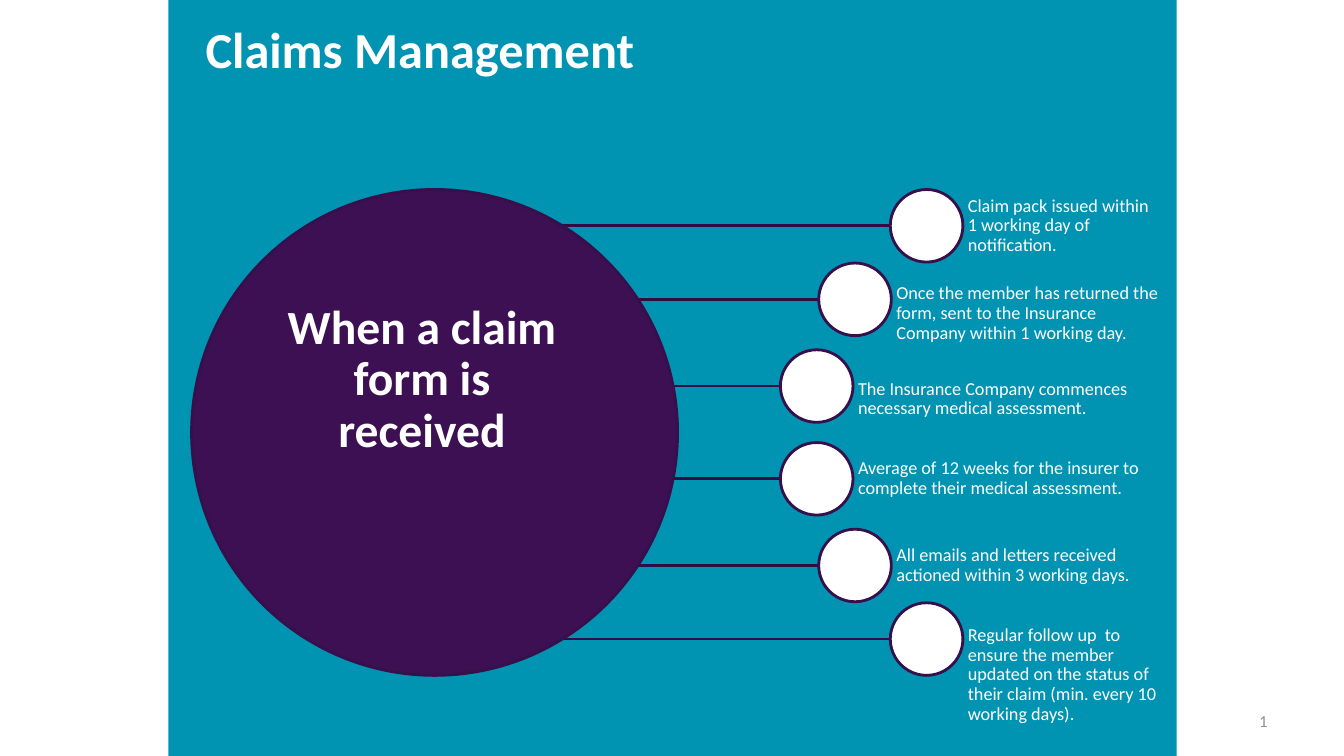
from lxml.etree import SubElement
from pptx import Presentation
from pptx.dml.color import RGBColor
from pptx.enum.shapes import MSO_CONNECTOR, MSO_SHAPE
from pptx.enum.text import MSO_ANCHOR, MSO_AUTO_SIZE, PP_ALIGN
from pptx.oxml.ns import qn
from pptx.util import Inches, Pt

TITLE = "Claims Management"
HUB = "When a claim form is received"
# step text, dot left, dot top, text drop below dot top, text height
STEPS = [
    ("Claim pack issued within 1 working day of notification.",
     8.83, 1.88, 0, 0.72),
    ("Once the member has returned the form, sent to the Insurance "
     "Company within 1 working day.", 8.12, 2.61, 0.14, 0.72),
    ("The Insurance Company commences necessary medical assessment.",
     7.74, 3.47, 0.13, 0.72),
    ("Average of 12 weeks for the insurer to complete their medical "
     "assessment.", 7.74, 4.39, 0, 0.72),
    ("All emails and letters received actioned within 3 working days.",
     8.12, 5.25, 0, 0.72),
    ("Regular follow up  to ensure the member updated on the status of "
     "their claim (min. every 10 working days).", 8.83, 5.98, 0.12, 1.19),
]
TEAL, PURPLE, EDGE, RAIL = "0093B2", "3C1053", "360F4B", "300D42"
WHITE, GREY = "FFFFFF", "928C99"
DOT, HUB_SIZE = 0.72, 4.82
HUB_LEFT, HUB_TOP = 1.9, 1.88
TEXT_RIGHT = 11.55


def color(code):
    return RGBColor.from_string(code)


def add_block(kind, left, top, width, height, fill, edge=None):
    block = slide.shapes.add_shape(
        kind, Inches(left), Inches(top), Inches(width), Inches(height))
    block.shadow.inherit = False
    block.fill.solid()
    block.fill.fore_color.rgb = color(fill)
    if edge:
        block.line.color.rgb = color(edge)
        block.line.width = Pt(2)
    else:
        block.line.fill.background()


def add_text(text, left, top, width, height, size, tint=WHITE, bold=False,
             align=PP_ALIGN.LEFT, anchor=MSO_ANCHOR.MIDDLE, side=None,
             spacing=None):
    """Add a text box; side sets the left and right insets, with none above or below."""
    box = slide.shapes.add_textbox(
        Inches(left), Inches(top), Inches(width), Inches(height))
    frame = box.text_frame
    frame.word_wrap = True
    frame.vertical_anchor = anchor
    if side is not None:
        frame.margin_left = frame.margin_right = Inches(side)
        frame.margin_top = frame.margin_bottom = 0
    frame.text = text
    line = frame.paragraphs[0]
    line.alignment = align
    if spacing:
        line.line_spacing = spacing
    font = line.runs[0].font
    font.name, font.size, font.bold = "Calibri", Pt(size), bold
    font.color.rgb = color(tint)
    return frame


def add_rail(start, end, y):
    rail = slide.shapes.add_connector(
        MSO_CONNECTOR.STRAIGHT, Inches(start), Inches(y), Inches(end), Inches(y))
    rail.line.color.rgb = color(RAIL)
    rail.line.width = Pt(2)
    SubElement(rail._element.spPr, qn("a:effectLst"))


deck = Presentation()
deck.slide_width, deck.slide_height = Inches(13.33), Inches(7.5)
slide = deck.slides.add_slide(deck.slide_layouts[6])

add_text("1", 9.56, 6.95, 3.11, 0.4, 12, GREY, align=PP_ALIGN.RIGHT)
add_block(MSO_SHAPE.RECTANGLE, 1.67, 0, 10, 7.5, TEAL)
title = add_text(TITLE, 1.94, 0.13, 4.5, 0.71, 36, bold=True,
                 anchor=MSO_ANCHOR.TOP)
title.word_wrap = False
title.auto_size = MSO_AUTO_SIZE.SHAPE_TO_FIT_TEXT

for _, left, top, _, _ in STEPS:
    add_rail(HUB_LEFT + HUB_SIZE / 2, left + DOT / 2, top + DOT / 2)

add_block(MSO_SHAPE.OVAL, HUB_LEFT, HUB_TOP, HUB_SIZE, HUB_SIZE, PURPLE, EDGE)
add_text(HUB, 2.64, 2.95, 3.09, 1.59, 34, bold=True, align=PP_ALIGN.CENTER,
         anchor=MSO_ANCHOR.BOTTOM, side=0, spacing=0.9)

for text, left, top, drop, height in STEPS:
    add_block(MSO_SHAPE.OVAL, left, top, DOT, DOT, WHITE, EDGE)
    start = left + DOT
    add_text(text, start, top + drop, TEXT_RIGHT - start, height, 13,
             side=0.05, spacing=0.9)

deck.save("out.pptx")
